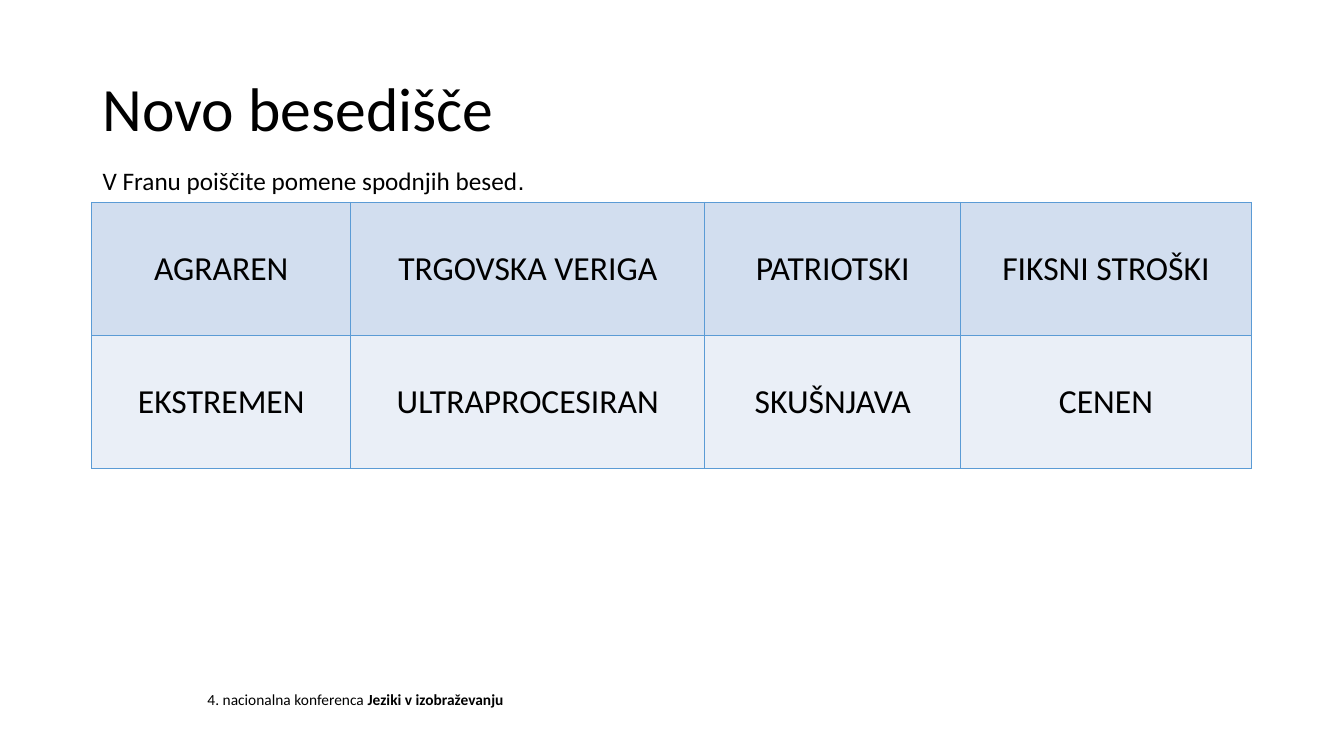
import pptx
import pptx.dml.color
import pptx.enum.text
import pptx.oxml
import pptx.oxml.ns
import pptx.util
from pptx.util import Inches

ANCHOR = pptx.enum.text.MSO_ANCHOR
ALIGN = pptx.enum.text.PP_ALIGN
INK = "000000"
BLUE = "5B9BD5"
WORDS = [
    ["AGRAREN", "TRGOVSKA VERIGA", "PATRIOTSKI", "FIKSNI STROŠKI"],
    ["EKSTREMEN", "ULTRAPROCESIRAN", "SKUŠNJAVA", "CENEN"],
]
FILLS = ["D2DEEF", "EAEFF7"]
WIDTHS = [2.57, 3.51, 2.54, 2.88]
HEIGHT = 1.32


def color(code):
    return pptx.dml.color.RGBColor.from_string(code)


class Page:
    def __init__(self, slide, font="Calibri"):
        self.slide = slide
        self.font = font

    def run(self, para, text, size, bold=False, font=None):
        run = para.add_run()
        run.text = text
        run.font.name = font or self.font
        run.font.size = pptx.util.Pt(size)
        run.font.bold = bold
        run.font.color.rgb = color(INK)

    def text(self, box, size, runs, anchor=ANCHOR.TOP, wrap=True, space=1.0):
        """Each run is (text, bold, font)."""
        frame = self.slide.shapes.add_textbox(*map(Inches, box)).text_frame
        frame.word_wrap = wrap
        frame.vertical_anchor = anchor
        para = frame.paragraphs[0]
        para.line_spacing = space
        for text, bold, font in runs:
            self.run(para, text, size, bold, font)

    def border(self, cell):
        props = cell._tc.get_or_add_tcPr()
        for rank, side in enumerate(("lnL", "lnR", "lnT", "lnB")):
            line = pptx.oxml.parse_xml(
                f'<a:{side} {pptx.oxml.ns.nsdecls("a")} w="12700"><a:solidFill>'
                f'<a:srgbClr val="{BLUE}"/></a:solidFill></a:{side}>')
            props.insert(rank, line)

    def table(self, left, top, size):
        grid = self.slide.shapes.add_table(
            len(WORDS), len(WIDTHS), Inches(left), Inches(top),
            Inches(sum(WIDTHS)), Inches(HEIGHT * len(WORDS))).table
        for col, width in zip(grid.columns, WIDTHS):
            col.width = Inches(width)
        for r, (words, fill) in enumerate(zip(WORDS, FILLS)):
            grid.rows[r].height = Inches(HEIGHT)
            for c, word in enumerate(words):
                cell = grid.cell(r, c)
                cell.fill.solid()
                cell.fill.fore_color.rgb = color(fill)
                cell.vertical_anchor = ANCHOR.MIDDLE
                para = cell.text_frame.paragraphs[0]
                para.alignment = ALIGN.CENTER
                self.run(para, word, size)
                self.border(cell)


def main():
    deck = pptx.Presentation()
    deck.slide_width = Inches(13.33)
    deck.slide_height = Inches(7.5)
    page = Page(deck.slides.add_slide(deck.slide_layouts[6]))

    # Footer
    page.text((1.96, 6.8, 3.4, 0.29), 11, [
        ("4. nacionalna konferenca ", False, None),
        ("Jeziki v izobraževanju", True, None)])

    # Title
    page.text((0.92, 0.38, 11.5, 1.45), 44, [("Novo besedišče", False, None)],
              anchor=ANCHOR.MIDDLE, space=0.9)

    # Word table
    page.table(0.91, 2.01, 24)

    # Task
    page.text((0.92, 1.59, 4.44, 0.4), 18, [
        ("V Franu poiščite pomene spodnjih besed", False, None),
        (".", False, "Arial")], wrap=False)

    deck.save("out.pptx")


if __name__ == "__main__":
    main()
